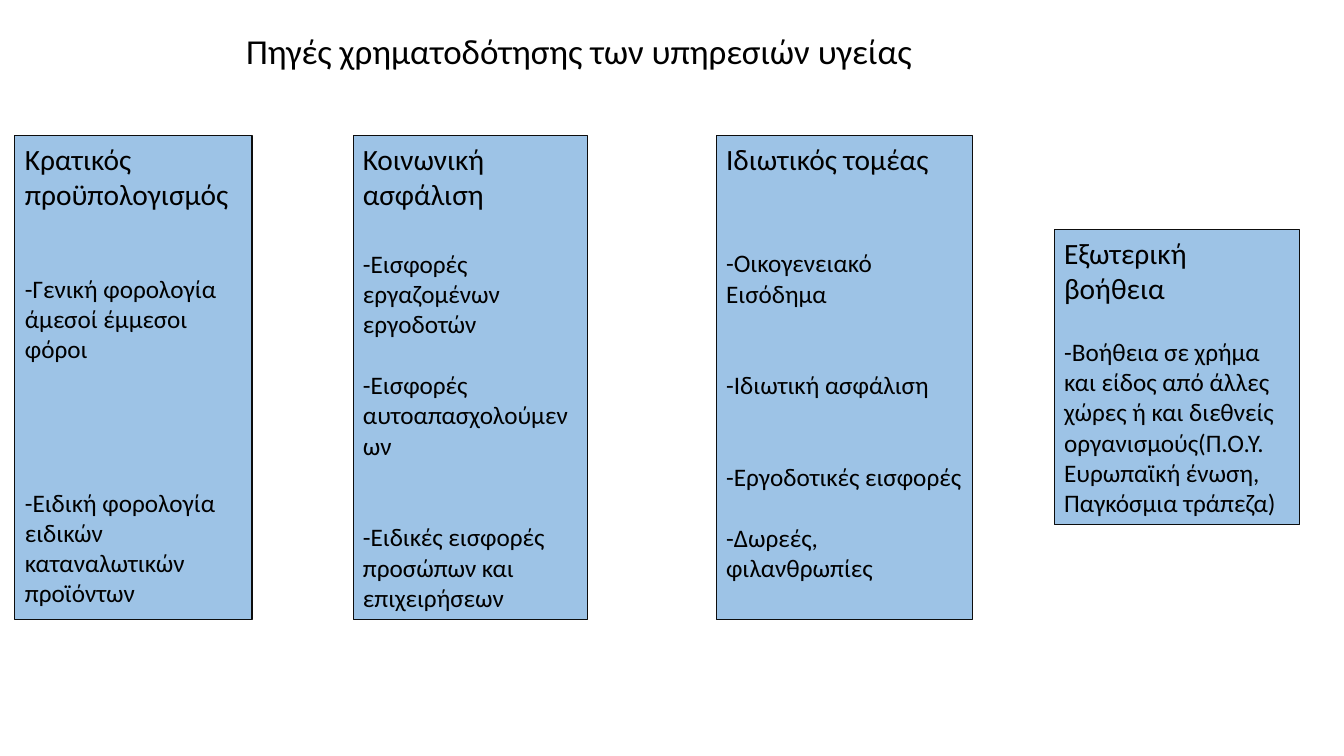
from pptx import Presentation
from pptx.dml.color import RGBColor
from pptx.enum.shapes import MSO_SHAPE as Shape
from pptx.enum.text import MSO_ANCHOR as Anchor, PP_ALIGN as Align
from pptx.util import Emu, Inches, Pt

EMU_PER_PX = 914400 / 100.8


def px(length):
    return Emu(round(length * EMU_PER_PX))


def color(hex_string):
    return RGBColor.from_string(hex_string)


def write(paragraph, text, size, font="Calibri", ink="000000", gap=0):
    paragraph.alignment = Align.LEFT
    paragraph.line_spacing = 1.0
    paragraph.space_before = Pt(gap)
    run = paragraph.add_run()
    run.text = text
    run.font.name = font
    run.font.size = Pt(size)
    run.font.color.rgb = color(ink)


class FundingSlide:
    fill = "9DC3E6"
    outline = "0D0D0D"
    title_size = 25
    heading_size = 21
    body_size = 18

    def __init__(self, presentation):
        self.slide = presentation.slides.add_slide(presentation.slide_layouts[5])

    def title(self, text, left, top, width, height):
        shape = self.slide.shapes.title
        shape.left, shape.top, shape.width, shape.height = map(px, (left, top, width, height))
        shape.text_frame.vertical_anchor = Anchor.TOP
        shape.text_frame.word_wrap = True
        write(shape.text_frame.paragraphs[0], text, self.title_size)

    def source_box(self, heading, items, left, top, width, height):
        shape = self.slide.shapes.add_shape(Shape.RECTANGLE, *map(px, (left, top, width, height)))
        shape.shadow.inherit = False
        shape.fill.solid()
        shape.fill.fore_color.rgb = color(self.fill)
        shape.line.color.rgb = color(self.outline)
        shape.line.width = Pt(0.75)
        frame = shape.text_frame
        frame.word_wrap = True
        frame.vertical_anchor = Anchor.TOP
        write(frame.paragraphs[0], heading, self.heading_size)
        for gap, text in items:
            write(frame.add_paragraph(), text, self.body_size, gap=gap)


SOURCES = [
    ("Κρατικός προϋπολογισμός", [
        (44, "-Γενική φορολογία άμεσοί έμμεσοι φόροι"),
        (88, "-Ειδική φορολογία ειδικών καταναλωτικών προϊόντων"),
    ], (15, 136, 237, 484)),
    ("Κοινωνική ασφάλιση", [
        (26, "-Εισφορές εργαζομένων εργοδοτών"),
        (22, "-Εισφορές αυτοαπασχολούμενων"),
        (44, "-Ειδικές εισφορές προσώπων και επιχειρήσεων"),
    ], (353, 136, 234, 484)),
    ("Ιδιωτικός τομέας", [
        (51, "-Οικογενειακό"),
        (0, "Εισόδημα"),
        (44, "-Ιδιωτική ασφάλιση"),
        (44, "-Εργοδοτικές εισφορές"),
        (22, "-Δωρεές, φιλανθρωπίες"),
    ], (716, 136, 256, 484)),
    ("Εξωτερική βοήθεια", [
        (22, "-Βοήθεια σε χρήμα και είδος από άλλες χώρες ή και διεθνείς "
             "οργανισμούς(Π.Ο.Υ. Ευρωπαϊκή ένωση, Παγκόσμια τράπεζα)"),
    ], (1054, 230, 245, 295)),
]


def main():
    presentation = Presentation()
    presentation.slide_width = Inches(13.33)
    presentation.slide_height = Inches(7.5)
    funding = FundingSlide(presentation)
    funding.title("Πηγές χρηματοδότησης των υπηρεσιών υγείας", 236, 24, 736, 52)
    for heading, items, bounds in SOURCES:
        funding.source_box(heading, items, *bounds)
    presentation.save("out.pptx")


if __name__ == "__main__":
    main()
